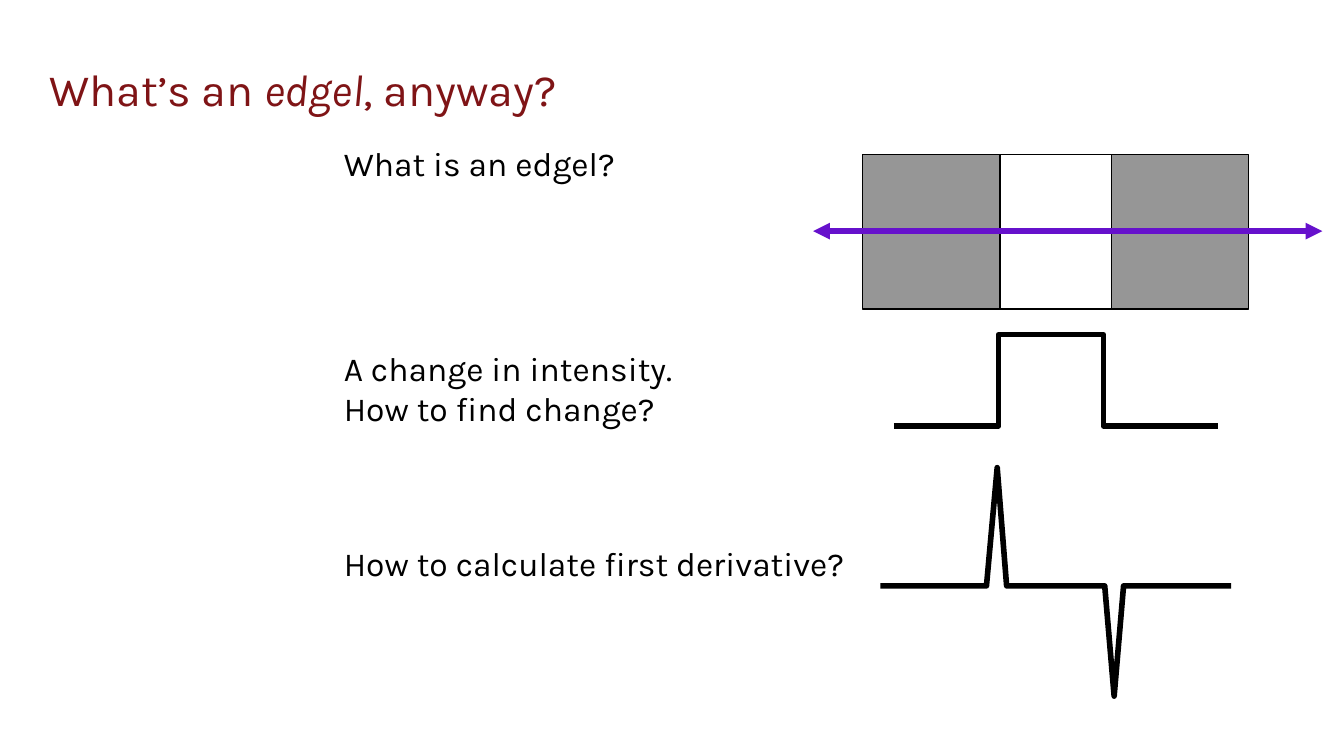
"""Build the slide that explains an edgel with an intensity profile and its derivative."""
from pptx import Presentation
from pptx.dml.color import RGBColor
from pptx.enum.shapes import MSO_CONNECTOR, MSO_SHAPE
from pptx.enum.text import MSO_ANCHOR
from pptx.oxml.ns import qn
from pptx.util import Inches, Pt
from lxml import etree

RECT = MSO_SHAPE.RECTANGLE
LINE = MSO_CONNECTOR.STRAIGHT
TOP, BOTTOM = MSO_ANCHOR.TOP, MSO_ANCHOR.BOTTOM
RED = RGBColor(0x7F, 0x14, 0x16)
BLACK = RGBColor(0, 0, 0)
WHITE = RGBColor(255, 255, 255)
GRAY = RGBColor(0x96, 0x96, 0x96)
PURPLE = RGBColor(0x66, 0x11, 0xCC)


def add_text(box, anchor):
    frame = slide.shapes.add_textbox(*map(Inches, box)).text_frame
    frame.word_wrap = True
    frame.vertical_anchor = anchor
    frame.margin_left = frame.margin_right = Inches(0.1)
    frame.margin_top = frame.margin_bottom = Inches(0.1)
    return frame


def style(run, size, color):
    run.font.name = "Karla"
    run.font.size = Pt(size)
    run.font.color.rgb = color


deck = Presentation()
deck.slide_width = Inches(10)
deck.slide_height = deck.slide_width * 9 // 16
slide = deck.slides.add_slide(deck.slide_layouts[6])

title = add_text((0.27, 0.07, 9.44, 0.89), BOTTOM).paragraphs[0]
for text in ("What’s an ", "edgel", ", anyway?"):
    run = title.add_run()
    run.text = text
    style(run, 24, RED)
    run.font.italic = text == "edgel"

body = add_text((2.46, 0.96, 7.26, 4.12), TOP)
lines = [
    ("What is an edgel?", 0),
    ("A change in intensity.\vHow to find change?", 88.5),
    ("How to calculate first derivative?", 61),
]
body.text = "\n".join(text for text, gap in lines)
for para, (text, gap) in zip(body.paragraphs, lines):
    para.text = text
    para.space_before = Pt(gap)
    for run in para.runs:
        style(run, 18, BLACK)

for left, width, color in ((6.42, 2.87, GRAY), (7.44, 0.83, WHITE)):
    band = slide.shapes.add_shape(
        RECT, Inches(left), Inches(1.15), Inches(width), Inches(1.15))
    band.shadow.inherit = False
    band.fill.solid()
    band.fill.fore_color.rgb = color
    band.line.color.rgb = BLACK
    band.line.width = Pt(0.75)

scan = slide.shapes.add_connector(
    LINE, Inches(6.05), Inches(1.72), Inches(9.84), Inches(1.72))
scan.line.color.rgb = PURPLE
scan.line.width = Pt(3)
props = scan.element.spPr
for end in ("a:headEnd", "a:tailEnd"):
    etree.SubElement(props.find(qn("a:ln")), qn(end), type="triangle")
etree.SubElement(props, qn("a:effectLst"))

step = [(6.65, 3.17), (7.43, 3.17), (7.43, 2.49),
        (8.21, 2.49), (8.21, 3.17), (9.06, 3.17)]
slope = [(6.55, 4.36), (7.34, 4.36), (7.42, 3.48), (7.49, 4.36),
         (8.22, 4.36), (8.29, 5.18), (8.36, 4.36), (9.16, 4.36)]
for curve in (step, slope):
    points = [(Inches(x), Inches(y)) for x, y in curve]
    path = slide.shapes.build_freeform(*points[0])
    path.add_line_segments(points[1:], close=False)
    graph = path.convert_to_shape()
    graph.shadow.inherit = False
    graph.fill.background()
    graph.line.color.rgb = BLACK
    graph.line.width = Pt(3)

deck.save("out.pptx")
